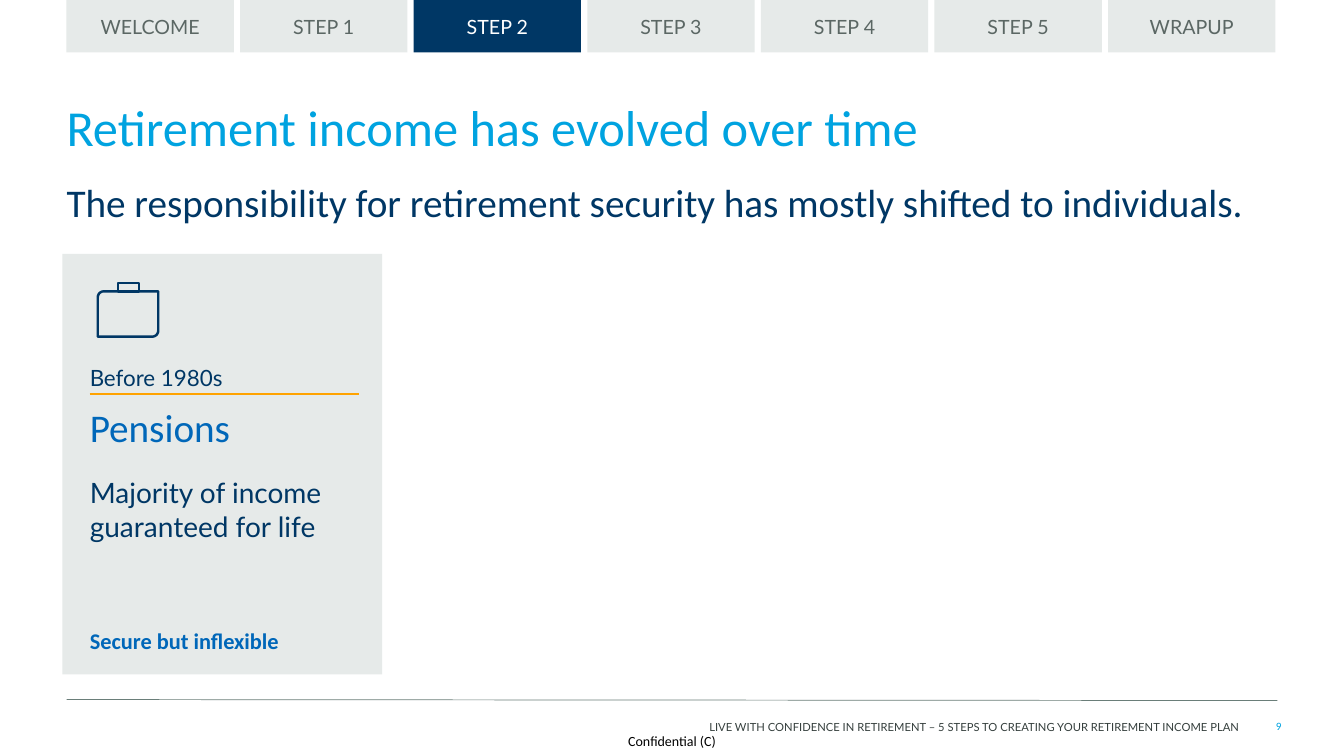
import math

from lxml import etree
from pptx import Presentation
from pptx import util as u
from pptx.dml.color import RGBColor
from pptx.enum import shapes, text
from pptx.oxml.ns import qn

NAVY = RGBColor(0x00, 0x37, 0x65)
BLUE = RGBColor(0x00, 0x67, 0xB9)
SKY = RGBColor(0x00, 0xA3, 0xE0)
ORANGE = RGBColor(0xFF, 0xA3, 0x00)
PALE = RGBColor(0xE6, 0xEA, 0xE9)
GREY = RGBColor(0x5B, 0x67, 0x64)
RULE_GREY = RGBColor(0x6A, 0x7E, 0x79)
FOOTER_GREY = RGBColor(0x35, 0x3F, 0x3D)
WHITE = RGBColor(0xFF, 0xFF, 0xFF)
BLACK = RGBColor(0x00, 0x00, 0x00)

LEFT, TOP = text.PP_ALIGN.LEFT, text.MSO_ANCHOR.TOP
CENTER, MIDDLE = text.PP_ALIGN.CENTER, text.MSO_ANCHOR.MIDDLE
RIGHT, BOTTOM = text.PP_ALIGN.RIGHT, text.MSO_ANCHOR.BOTTOM

TABS = ["WELCOME", "STEP 1", "STEP 2", "STEP 3", "STEP 4", "STEP 5", "WRAPUP"]
CURRENT_TAB = "STEP 2"
FIRST_TAB_LEFT, LAST_TAB_LEFT = 0.66, 10.99
TAB_PITCH = (LAST_TAB_LEFT - FIRST_TAB_LEFT) / (len(TABS) - 1)


def set_frame(frame, anchor):
    frame.word_wrap = True
    frame.vertical_anchor = anchor
    frame.margin_left = frame.margin_right = 0
    frame.margin_top = frame.margin_bottom = 0


def style_paragraph(paragraph, words, size, color, font="Calibri", align=LEFT,
                    bold=False, after=0):
    paragraph.text = words
    paragraph.alignment = align
    paragraph.space_after = u.Pt(after)
    paragraph.font.name = font
    paragraph.font.size = u.Pt(size)
    paragraph.font.bold = bold
    paragraph.font.color.rgb = color


def add_text(slide, box, paragraphs, anchor=TOP):
    """Add a text box; each paragraph is a dict of style_paragraph arguments."""
    frame = slide.shapes.add_textbox(*map(u.Inches, box)).text_frame
    set_frame(frame, anchor)
    for index, settings in enumerate(paragraphs):
        paragraph = frame.add_paragraph() if index else frame.paragraphs[0]
        style_paragraph(paragraph, **settings)
    return frame


def add_panel(slide, box, fill):
    panel = slide.shapes.add_shape(shapes.MSO_SHAPE.RECTANGLE, *map(u.Inches, box))
    panel.shadow.inherit = False
    panel.fill.solid()
    panel.fill.fore_color.rgb = fill
    panel.line.fill.background()
    return panel


def add_tab(slide, index, label):
    current = label == CURRENT_TAB
    box = (FIRST_TAB_LEFT + index * TAB_PITCH, 0, 1.66, 0.52)
    frame = add_panel(slide, box, NAVY if current else PALE).text_frame
    set_frame(frame, MIDDLE)
    style_paragraph(frame.paragraphs[0], label, 14, WHITE if current else GREY,
                    font="Lato", align=CENTER)


def add_rule(slide, start, end, color, width):
    rule = slide.shapes.add_connector(shapes.MSO_CONNECTOR.STRAIGHT,
                                      *map(u.Inches, start + end))
    rule.line.color.rgb = color
    rule.line.width = u.Pt(width)
    etree.SubElement(rule._element.spPr, qn("a:effectLst"))


def corner(x, y, radius, first_angle):
    """Points of a quarter turn around (x, y), angles falling from first_angle."""
    angles = [math.radians(first_angle - step * 15) for step in range(7)]
    return [(x + radius * math.cos(a), y + radius * math.sin(a)) for a in angles]


def add_outline(slide, points):
    points = [(u.Inches(x), u.Inches(y)) for x, y in points]
    builder = slide.shapes.build_freeform(*points[0], scale=1.0)
    builder.add_line_segments(points[1:], close=True)
    outline = builder.convert_to_shape()
    outline.shadow.inherit = False
    outline.fill.background()
    outline.line.color.rgb = NAVY
    outline.line.width = u.Pt(1.75)


def add_briefcase(slide):
    left, top, right, bottom, radius = 0.97, 2.89, 1.57, 3.34, 0.06
    add_outline(slide, [(left, bottom)]
                + corner(right - radius, bottom - radius, radius, 90)
                + [(right, top)]
                + corner(left + radius, top + radius, radius, 270))
    add_outline(slide, [(1.17, 2.81), (1.38, 2.81), (1.38, top), (1.17, top)])


def add_pension_card(slide):
    add_panel(slide, (0.62, 2.52, 3.17, 4.17), PALE)
    add_briefcase(slide)
    add_text(slide, (0.89, 3.61, 2.58, 2.31), [
        dict(words="Before 1980s", size=16, color=NAVY, font="Lato", after=9),
        dict(words="Pensions", size=28, color=BLUE, after=18),
        dict(words="Majority of income\vguaranteed for life", size=20,
             color=NAVY, font="Lato"),
    ])
    add_text(slide, (0.89, 6.22, 2.88, 0.27), [
        dict(words="Secure but inflexible", size=16, color=BLUE, bold=True)])
    add_rule(slide, (0.89, 3.91), (3.56, 3.91), ORANGE, 1)


def add_footer(slide):
    add_rule(slide, (0.66, 6.94), (12.67, 6.95), RULE_GREY, 0.5)
    add_text(slide, (5.92, 7.05, 6.38, 0.23), [
        dict(words="LIVE WITH CONFIDENCE IN RETIREMENT – 5 STEPS TO CREATING "
                   "YOUR RETIREMENT INCOME PLAN",
             size=8, color=FOOTER_GREY, font="Lato", align=RIGHT)], BOTTOM)
    add_text(slide, (12.4, 7.11, 0.31, 0.16), [
        dict(words="9", size=8, color=SKY, align=RIGHT)], BOTTOM)
    add_text(slide, (6.07, 7.21, 1.19, 0.29), [
        dict(words="Confidential (C)", size=10, color=BLACK, align=CENTER)], MIDDLE)


def main():
    presentation = Presentation()
    presentation.slide_width = u.Inches(13.33)
    presentation.slide_height = u.Inches(7.5)
    slide = presentation.slides.add_slide(presentation.slide_layouts[6])

    add_footer(slide)
    title = add_text(slide, (0.66, 1.14, 11.99, 0.75), [
        dict(words="Retirement income has evolved over time", size=36, color=SKY)])
    title.paragraphs[0].line_spacing = u.Pt(30)
    add_text(slide, (0.66, 1.77, 11.99, 0.58), [
        dict(words="The responsibility for retirement security has mostly "
                   "shifted to individuals.", size=28, color=NAVY)])
    for index, label in enumerate(TABS):
        add_tab(slide, index, label)
    add_pension_card(slide)

    presentation.save("out.pptx")


if __name__ == "__main__":
    main()
